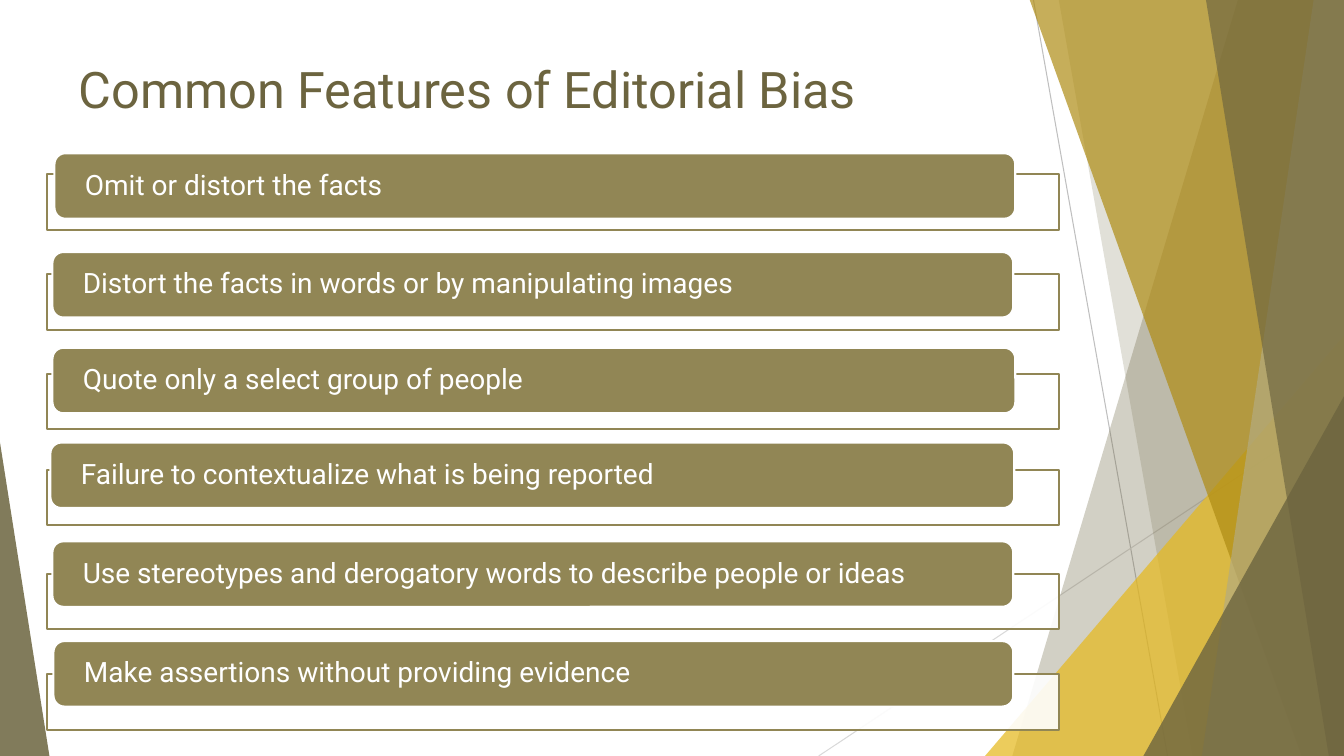
from pptx import Presentation
from pptx import util as u
from pptx.dml.color import RGBColor
from pptx.enum import shapes as kinds, text
from pptx.oxml.ns import qn
from lxml import etree

OLIVE, KHAKI, WHITE = "6C643F", "918655", "FFFFFF"
FONT = "Roboto"
TOP, BOTTOM, RIGHT = -0.01, 7.5, 13.33

FEATURES = [
    ("Omit or distort the facts", 1.73, 0.54, 1.52, 9.53),
    ("Distort the facts in words or by manipulating images", 2.72, 0.52, 2.5, 9.53),
    ("Quote only a select group of people", 3.71, 0.52, 3.45, 9.55),
    ("Failure to contextualize what is being reported", 4.66, 0.5, 4.39, 9.56),
    ("Use stereotypes and derogatory words to describe people or ideas",
     5.69, 0.52, 5.37, 9.53),
    ("Make assertions without providing evidence", 6.69, 0.53, 6.36, 9.52),
]


def paint(fill, color, opacity=100):
    fill.solid()
    fill.fore_color.rgb = RGBColor.from_string(color)
    if opacity < 100:
        tint = fill._xPr.find(qn("a:solidFill"))[0]
        etree.SubElement(tint, qn("a:alpha"), val=str(opacity * 1000))


def style(shape, color, opacity=100, outline=None):
    shape.shadow.inherit = False
    paint(shape.fill, color, opacity)
    if outline:
        paint(shape.line.fill, outline)
        shape.line.width = u.Pt(1.5)
    else:
        shape.line.fill.background()


def set_font(paragraph, size, color):
    paragraph.font.name = FONT
    paragraph.font.size = u.Pt(size)
    paragraph.font.color.rgb = RGBColor.from_string(color)


def add_ray(slide, start, end, color):
    ray = slide.shapes.add_connector(
        kinds.MSO_CONNECTOR.STRAIGHT, *map(u.Inches, start + end))
    paint(ray.line.fill, color)
    ray.line.width = u.Pt(0.75)
    etree.SubElement(ray._element.spPr, qn("a:effectLst"))


def add_facet(slide, top_x, bottom_x, color, opacity):
    corners = [(top_x, TOP), (RIGHT, TOP), (RIGHT, BOTTOM), (bottom_x, BOTTOM)]
    points = [(u.Inches(x), u.Inches(y)) for x, y in corners]
    outline = slide.shapes.build_freeform(*points[0], scale=1.0)
    outline.add_line_segments(points[1:], close=True)
    style(outline.convert_to_shape(), color, opacity)


def add_shape(slide, kind, left, top, width, height):
    return slide.shapes.add_shape(
        kind, *map(u.Inches, (left, top, width, height)))


def add_corner(slide, left, top, width, apex, color, opacity):
    corner = add_shape(slide, kinds.MSO_SHAPE.ISOSCELES_TRIANGLE,
                       left, top, width, BOTTOM - top)
    corner.adjustments[0] = apex
    style(corner, color, opacity)


def add_backdrop(slide):
    add_ray(slide, (10.25, 0), (11.58, BOTTOM), "BFBFBF")
    add_ray(slide, (RIGHT, 4.03), (8.12, BOTTOM), "D9D9D9")
    add_facet(slide, 12.28, 10.04, OLIVE, 30)
    add_facet(slide, 10.5, 11.83, OLIVE, 20)
    add_corner(slide, 9.77, 3.33, 3.56, 1, "E6B91E", 72)
    add_facet(slide, 10.21, 12.91, "AF8C14", 70)
    add_facet(slide, 13.03, 11.92, "B4AB7F", 70)
    add_facet(slide, 11.96, 13.18, OLIVE, 65)
    add_corner(slide, 11.34, 3.93, 1.99, 1, OLIVE, 80)
    add_corner(slide, 0, 4.39, 0.49, 0, OLIVE, 85)


def set_title(slide, wording):
    title = slide.shapes.title
    title.left, title.top, title.width, title.height = map(
        u.Inches, (0.68, 0.46, 9.4, 0.83))
    title.text_frame.text = wording
    title.text_frame.vertical_anchor = text.MSO_ANCHOR.MIDDLE
    heading = title.text_frame.paragraphs[0]
    heading.alignment = text.PP_ALIGN.LEFT
    set_font(heading, 36, OLIVE)


def add_feature(slide, wording, frame_top, left, top, width):
    frame = add_shape(slide, kinds.MSO_SHAPE.RECTANGLE, 0.47, frame_top, 10.03, 0.55)
    style(frame, WHITE, 90, KHAKI)
    label = add_shape(slide, kinds.MSO_SHAPE.ROUNDED_RECTANGLE, left, top, width, 0.65)
    style(label, KHAKI, outline=WHITE)
    body = label.text_frame
    body.word_wrap = True
    body.vertical_anchor = text.MSO_ANCHOR.MIDDLE
    body.margin_left = body.margin_right = u.Inches(0.27)
    body.margin_top = body.margin_bottom = 0
    body.text = wording
    feature = body.paragraphs[0]
    feature.alignment = text.PP_ALIGN.LEFT
    feature.line_spacing = 0.9
    set_font(feature, 20, WHITE)


def main():
    deck = Presentation()
    deck.slide_width, deck.slide_height = u.Inches(RIGHT), u.Inches(BOTTOM)
    slide = deck.slides.add_slide(deck.slide_layouts[5])
    add_backdrop(slide)
    set_title(slide, "Common Features of Editorial Bias")
    for feature in FEATURES:
        add_feature(slide, *feature)
    deck.save("out.pptx")


if __name__ == "__main__":
    main()
